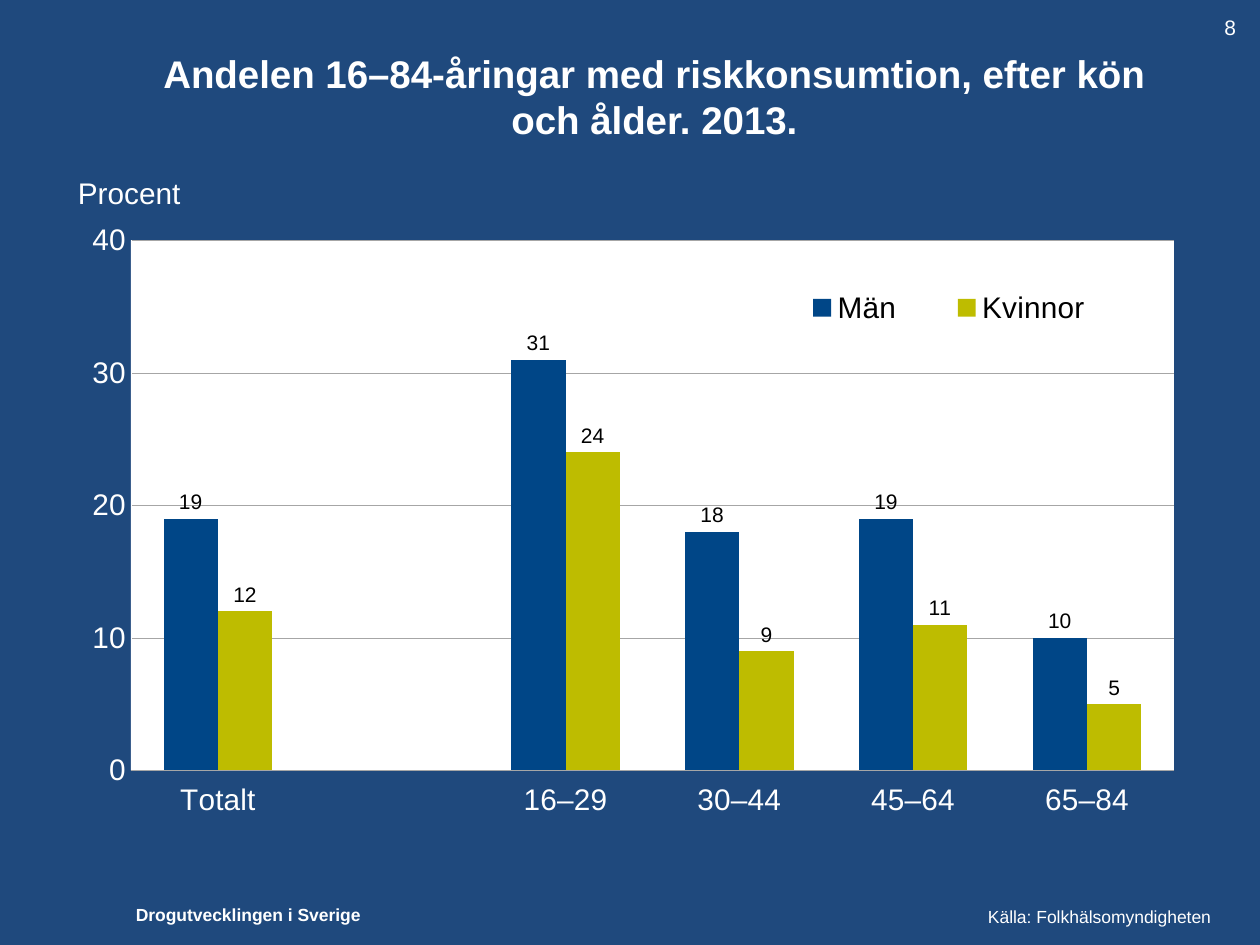
from lxml import etree
from pptx import Presentation
from pptx.chart.data import CategoryChartData
from pptx.dml.color import RGBColor
from pptx.enum.chart import XL_CHART_TYPE, XL_LABEL_POSITION, XL_LEGEND_POSITION, XL_TICK_MARK
from pptx.enum.text import MSO_ANCHOR, PP_ALIGN
from pptx.oxml.ns import qn
from pptx.util import Pt

NAVY, WHITE, BLACK, GREY = "1F497D", "FFFFFF", "000000", "A6A6A6"
CATEGORIES = ["Totalt", "", "16–29", "30–44", "45–64", "65–84"]
SERIES = [
    ("Män", "004687", [19, None, 31, 18, 19, 10]),
    ("Kvinnor", "BEBC00", [12, None, 24, 9, 11, 5]),
]


def paint(fill, color):
    fill.solid()
    fill.fore_color.rgb = RGBColor.from_string(color)


def style_font(font, size, color, bold=False):
    font.name, font.size, font.bold = "Arial", Pt(size), bold
    font.color.rgb = RGBColor.from_string(color)


def style_line(line, color):
    paint(line.fill, color)
    line.width = Pt(0.25)


def add_text(s, box, text, size, bold=False, align=PP_ALIGN.LEFT, wrap=True):
    sp = s.shapes.add_textbox(*map(Pt, box))
    tf = sp.text_frame
    tf.text = text
    tf.word_wrap = wrap
    tf.vertical_anchor = MSO_ANCHOR.MIDDLE
    p = tf.paragraphs[0]
    p.alignment = align
    style_font(p.runs[0].font, size, WHITE, bold)


def set_layout(parent, box, inner=False):
    """Place a chart part by fractions of the chart area."""
    for old in parent.findall(qn("c:layout")):
        parent.remove(old)
    layout = etree.Element(qn("c:layout"))
    manual = etree.SubElement(layout, qn("c:manualLayout"))
    items = [("layoutTarget", "inner")] if inner else []
    items += [("xMode", "edge"), ("yMode", "edge"), *zip("xywh", box)]
    for tag, value in items:
        etree.SubElement(manual, qn(f"c:{tag}")).set("val", str(value))
    if inner:
        parent.insert(0, layout)
    else:
        parent.find(qn("c:legendPos")).addnext(layout)


def add_bar_chart(s, box):
    data = CategoryChartData()
    data.categories = CATEGORIES
    for name, _, values in SERIES:
        data.add_series(name, values)
    chart = s.shapes.add_chart(XL_CHART_TYPE.COLUMN_CLUSTERED, *map(Pt, box), data).chart
    chart.has_title = False
    style_font(chart.font, 17, WHITE)

    # Bars and their values
    plot = chart.plots[0]
    plot.gap_width, plot.overlap = 120, 0
    plot.vary_by_categories = False
    for series, (_, color, _) in zip(plot.series, SERIES):
        paint(series.format.fill, color)
        series.invert_if_negative = False
        labels = series.data_labels
        labels.show_value = True
        labels.position = XL_LABEL_POSITION.OUTSIDE_END
        style_font(labels.font, 12, BLACK)

    # Axes
    cat, val = chart.category_axis, chart.value_axis
    cat.format.line.fill.background()
    cat.major_tick_mark = XL_TICK_MARK.OUTSIDE
    val.minimum_scale, val.maximum_scale, val.major_unit = 0, 40, 10
    val.major_tick_mark = XL_TICK_MARK.NONE
    style_line(val.format.line, WHITE)
    style_line(val.major_gridlines.format.line, GREY)
    for axis in (cat, val):
        style_font(axis.tick_labels.font, 17, WHITE)

    # Legend inside the plot
    chart.has_legend = True
    legend = chart.legend
    legend.position = XL_LEGEND_POSITION.RIGHT
    legend.include_in_layout = True
    style_font(legend.font, 17, BLACK)
    set_layout(legend._element, (0.62, 0.1, 0.34, 0.08))

    # White plot area
    area = chart._chartSpace.chart.plotArea
    set_layout(area, (0.048, 0.032, 0.946, 0.85), inner=True)
    sp_pr = etree.SubElement(area, qn("c:spPr"))
    fill = etree.SubElement(sp_pr, qn("a:solidFill"))
    etree.SubElement(fill, qn("a:srgbClr")).set("val", WHITE)


def add_heading(s, box):
    x, y, w, h = box
    add_text(s, box, "Andelen 16–84-åringar med riskkonsumtion, efter kön och ålder. 2013.",
             22, bold=True, align=PP_ALIGN.CENTER)
    add_text(s, (x - 44.6, y + h + 1, 74, 28), "Procent", 17)


def add_footer(s, box):
    x, y, w, h = box
    add_text(s, (x, y, 145, h), "Drogutvecklingen i Sverige", 10, bold=True, wrap=False)
    add_text(s, (x + w - 158, y + 1, 158, h), "Källa: Folkhälsomyndigheten", 10)


def main():
    prs = Presentation()
    prs.slide_width, prs.slide_height = Pt(720), Pt(540)
    s = prs.slides.add_slide(prs.slide_layouts[6])
    paint(s.background.fill, NAVY)
    add_heading(s, (82, 15, 584, 80))
    add_bar_chart(s, (44.6, 126, 630, 356.4))
    add_text(s, (692.5, 4.5, 27, 21.5), "8", 12)
    add_footer(s, (70.5, 513, 645, 19.5))
    prs.save("out.pptx")


if __name__ == "__main__":
    main()
